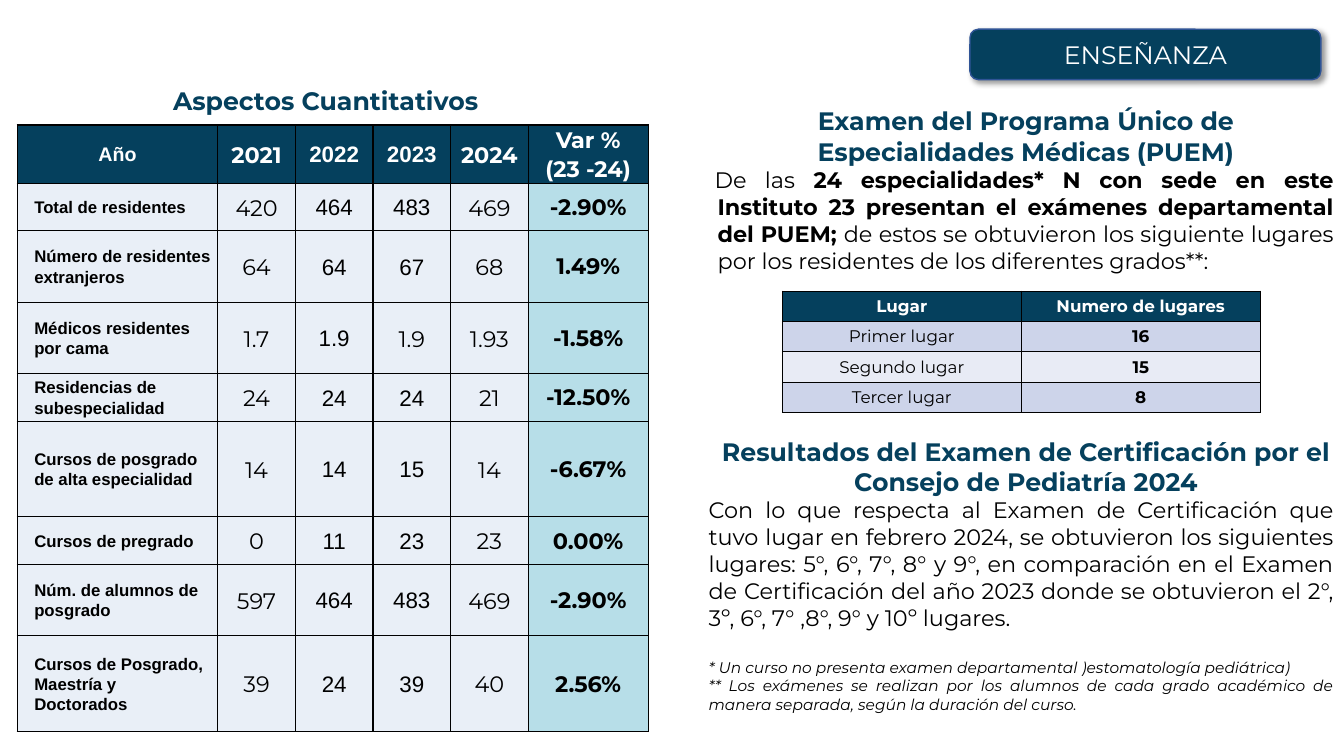
from dataclasses import dataclass

from lxml.etree import SubElement
from pptx import Presentation
from pptx.dml.color import RGBColor
from pptx.enum.shapes import MSO_SHAPE
from pptx.enum.text import MSO_ANCHOR, MSO_AUTO_SIZE, PP_ALIGN
from pptx.oxml import parse_xml
from pptx.oxml.ns import nsdecls, qn
from pptx.table import Table, _Cell
from pptx.text.text import TextFrame, _Paragraph
from pptx.util import Inches, Pt

COLORS = {
    "navy": "05405D", "white": "FFFFFF", "black": "000000", "outline": "2F5496",
    "pale": "E9EFF7", "aqua": "B7DEE8", "band_dark": "CDD4EA", "band_light": "E8EBF5",
}
SANS = "Arial"
BRAND_FONT = "Montserrat"


@dataclass(frozen=True)
class Style:
    size: float
    color: str = "black"
    bold: bool = False
    italic: bool = False
    font: str = BRAND_FONT


@dataclass(frozen=True)
class CellLook:
    fill: str
    side: float = 0.07
    top: float = 0
    bottom: float = 0
    spacing: float | None = 1.07
    align: PP_ALIGN = PP_ALIGN.CENTER
    indent: float = 0


@dataclass(frozen=True)
class Indicator:
    label: str
    years: tuple[str, str, str, str]
    variation: str
    height: float
    font_2023: str = SANS


@dataclass(frozen=True)
class Block:
    spans: tuple[tuple[str, Style], ...]
    align: PP_ALIGN = PP_ALIGN.JUSTIFY
    before: float = 0
    margin: float = 0
    hanging: float = 0


HEADING = Style(18, "navy", True)
BODY = Style(16)
STRONG = Style(16, bold=True)
NOTE = Style(11, italic=True)

INDICATORS = [
    Indicator("Total de residentes", ("420", "464", "483", "469"), "-2.90%", 0.47),
    Indicator("Número de residentes extranjeros", ("64", "64", "67", "68"), "1.49%", 0.71),
    Indicator("Médicos residentes por cama", ("1.7", "1.9", "1.9", "1.93"), "-1.58%", 0.71, BRAND_FONT),
    Indicator("Residencias de subespecialidad", ("24", "24", "24", "21"), "-12.50%", 0.47),
    Indicator("Cursos de posgrado de alta especialidad", ("14", "14", "15", "14"), "-6.67%", 0.95),
    Indicator("Cursos de pregrado", ("0", "11", "23", "23"), "0.00%", 0.47),
    Indicator("Núm. de alumnos de posgrado", ("597", "464", "483", "469"), "-2.90%", 0.71),
    Indicator("Cursos de Posgrado, Maestría y Doctorados", ("39", "24", "39", "40"), "2.56%", 0.95),
]
PLACES = [("Lugar", "Numero de lugares"), ("Primer lugar", "16"),
          ("Segundo lugar", "15"), ("Tercer lugar", "8")]

BLOCKS = [
    Block((("Examen del Programa Único de Especialidades Médicas (PUEM)", HEADING),),
          PP_ALIGN.CENTER, margin=0.09),
    Block((("De las ", BODY),
           ("24 especialidades* N con sede en este Instituto 23 presentan el exámenes "
            "departamental del PUEM; ", STRONG),
           ("de estos se obtuvieron los siguiente lugares por los residentes de los "
            "diferentes grados**:", BODY)), margin=0.09, hanging=-0.03),
    Block((("Resultados del Examen de Certificación por el Consejo de Pediatría 2024", HEADING),),
          PP_ALIGN.CENTER, before=116, margin=0.09),
    Block((("Con lo que respecta al Examen de Certificación que tuvo lugar en febrero 2024, "
            "se obtuvieron los siguientes lugares: 5°, 6°, 7°, 8° y 9°, en comparación en el "
            "Examen de Certificación del año 2023 donde se obtuvieron el 2°, 3º, 6°, 7° ,8°, "
            "9° y 10º lugares.", BODY),)),
    Block((("* Un curso no presenta examen departamental )estomatología pediátrica)", NOTE),),
          before=19.3),
    Block((("** Los exámenes se realizan por los alumnos de cada grado académico de manera "
            "separada, según la duración del curso.", NOTE),)),
]


def rgb(name: str) -> RGBColor:
    return RGBColor.from_string(COLORS[name])


def format_runs(para: _Paragraph, style: Style) -> None:
    for span in para.runs:
        font = span.font
        font.size, font.name = Pt(style.size), style.font
        font.bold, font.italic = style.bold, style.italic
        font.color.rgb = rgb(style.color)


def add_borders(cell: _Cell) -> None:
    properties = cell._tc.get_or_add_tcPr()
    for index, side in enumerate(("lnL", "lnR", "lnT", "lnB")):
        properties.insert(index, parse_xml(
            f'<a:{side} {nsdecls("a")} w="12700"><a:solidFill>'
            f'<a:srgbClr val="{COLORS["black"]}"/></a:solidFill></a:{side}>'))


def fill_cell(cell: _Cell, text: str, style: Style, look: CellLook) -> None:
    cell.fill.solid()
    cell.fill.fore_color.rgb = rgb(look.fill)
    add_borders(cell)
    cell.vertical_anchor = MSO_ANCHOR.MIDDLE
    cell.margin_left = cell.margin_right = Inches(look.side)
    cell.margin_top, cell.margin_bottom = Inches(look.top), Inches(look.bottom)
    cell.text_frame.text = text
    for para in cell.text_frame.paragraphs:
        para.alignment = look.align
        para.line_spacing = look.spacing
        if look.indent:
            para._p.get_or_add_pPr().set("marL", str(Inches(look.indent)))
        format_runs(para, style)


def add_grid(page, left: float, top: float, widths: list[float], heights: list[float]) -> Table:
    frame = page.shapes.add_table(len(heights), len(widths), Inches(left), Inches(top),
                                  Inches(sum(widths)), Inches(sum(heights)))
    table = frame.table
    table.horz_banding = False
    for column, width in zip(table.columns, widths):
        column.width = Inches(width)
    for row, height in zip(table.rows, heights):
        row.height = Inches(height)
    return table


def add_indicator_table(page) -> None:
    heights = [0.54] + [item.height for item in INDICATORS]
    table = add_grid(page, 0.17, 1.24, [1.99] + [0.77] * 4 + [1.19], heights)
    header_fonts = [SANS, BRAND_FONT, SANS, SANS, BRAND_FONT, BRAND_FONT]
    titles = ["Año", "2021", "2022", "2023", "2024", "Var %\n(23 -24)"]
    for column, (title, font) in enumerate(zip(titles, header_fonts)):
        style = Style(16 if column else 14, "white", True, font=font)
        fill_cell(table.cell(0, column), title, style, CellLook("navy"))
    label_look = CellLook("pale", align=PP_ALIGN.LEFT, indent=0.1)
    variation_look = CellLook("aqua", side=0.01, top=0.01, spacing=None)
    for row, item in enumerate(INDICATORS, 1):
        fill_cell(table.cell(row, 0), item.label, Style(12, bold=True, font=SANS), label_look)
        fonts = (BRAND_FONT, SANS, item.font_2023, BRAND_FONT)
        for column, (value, font) in enumerate(zip(item.years, fonts), 1):
            fill_cell(table.cell(row, column), value, Style(16, font=font), CellLook("pale"))
        fill_cell(table.cell(row, 5), item.variation, STRONG, variation_look)


def add_places_table(page) -> None:
    table = add_grid(page, 7.76, 2.89, [2.37] * 2, [0.3] * len(PLACES))
    for row, values in enumerate(PLACES):
        fill = ("band_dark" if row % 2 else "band_light") if row else "navy"
        look = CellLook(fill, side=0.1, top=0.05, bottom=0.05, spacing=None)
        for column, value in enumerate(values):
            style = Style(12, "black" if row else "white", row == 0 or column == 1)
            fill_cell(table.cell(row, column), value, style, look)


def add_blocks(page, left: float, top: float, width: float, height: float,
               blocks: list[Block]) -> None:
    box = page.shapes.add_textbox(Inches(left), Inches(top), Inches(width), Inches(height))
    frame: TextFrame = box.text_frame
    frame.word_wrap = True
    frame.auto_size = MSO_AUTO_SIZE.SHAPE_TO_FIT_TEXT
    for index, block in enumerate(blocks):
        para = frame.add_paragraph() if index else frame.paragraphs[0]
        para.alignment = block.align
        if block.before:
            para.space_before = Pt(block.before)
        properties = para._p.get_or_add_pPr()
        properties.set("marL", str(Inches(block.margin)))
        properties.set("indent", str(Inches(block.hanging)))
        for text, style in block.spans:
            span = para.add_run()
            span.text = text
            font = span.font
            font.size, font.name = Pt(style.size), style.font
            font.bold, font.italic = style.bold, style.italic
            font.color.rgb = rgb(style.color)


def add_section_tag(page) -> None:
    tag = page.shapes.add_shape(MSO_SHAPE.ROUNDED_RECTANGLE, Inches(9.62), Inches(0.29),
                                Inches(3.48), Inches(0.5))
    tag.fill.solid()
    tag.fill.fore_color.rgb = rgb("navy")
    tag.line.color.rgb, tag.line.width = rgb("outline"), Pt(1)
    tag.shadow.inherit = False
    effects = tag._element.spPr.find(qn("a:effectLst"))
    shadow = SubElement(effects, qn("a:outerShdw"), blurRad=str(Pt(4)), dist=str(Pt(3)),
                        dir="2700000", algn="tl", rotWithShape="0")
    shade = SubElement(shadow, qn("a:srgbClr"), val=COLORS["black"])
    SubElement(shade, qn("a:alpha"), val="40000")
    tag.text_frame.text = "ENSEÑANZA"
    tag.text_frame.vertical_anchor = MSO_ANCHOR.MIDDLE
    para = tag.text_frame.paragraphs[0]
    para.alignment = PP_ALIGN.CENTER
    format_runs(para, Style(18, "white"))


def main() -> None:
    deck = Presentation()
    deck.slide_width, deck.slide_height = Inches(13.33), Inches(7.5)
    page = deck.slides.add_slide(deck.slide_layouts[6])
    add_indicator_table(page)
    add_blocks(page, 6.93, 1, 6.4, 6.18, BLOCKS)
    add_places_table(page)
    add_section_tag(page)
    title = Block((("Aspectos Cuantitativos", HEADING),), PP_ALIGN.CENTER)
    add_blocks(page, 0.75, 0.8, 4.96, 0.4, [title])
    deck.save("out.pptx")


if __name__ == "__main__":
    main()
